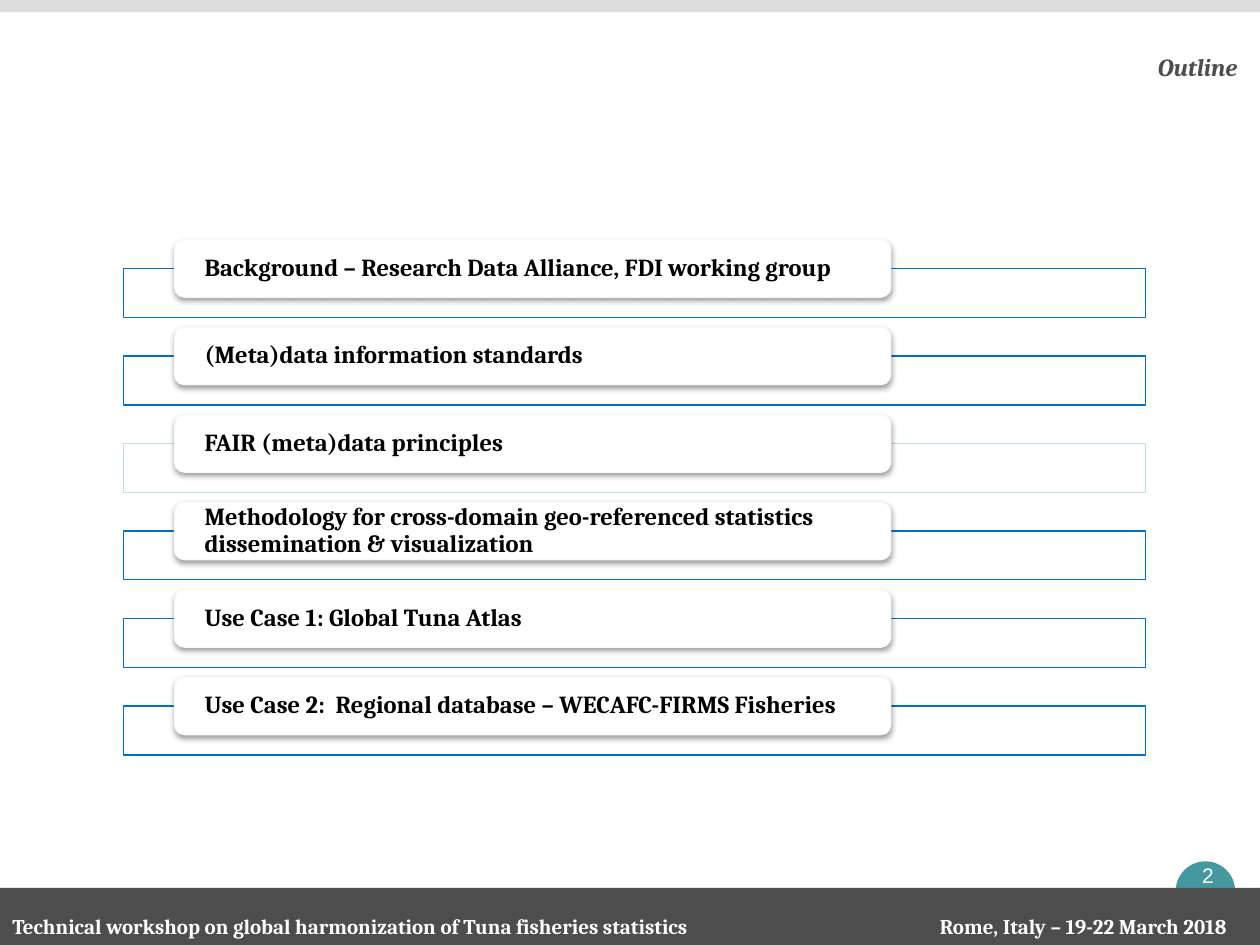
from dataclasses import dataclass, field

from lxml import etree
from pptx import Presentation
from pptx import util as u
from pptx.dml import color
from pptx.enum import shapes, text
from pptx.oxml import ns

COLOURS = {
    "white": "FFFFFF",
    "black": "000000",
    "top band": "DDDDDD",
    "dark grey": "4D4D4D",
    "teal": "4597A0",
    "blue": "0070C0",
    "pale teal": "BBE0E3",
    "card edge": "F9F9F9",
}
SHAPE = shapes.MSO_SHAPE
ALIGN = text.PP_ALIGN
ANCHOR = text.MSO_ANCHOR

HEADING = {"name": "Cambria", "size": u.Pt(14), "bold": True}
FOOTER = {"name": "Cambria", "size": u.Pt(12), "bold": True}
NUMBER = {"name": "Arial", "size": u.Pt(12)}


@dataclass
class Area:
    left: float
    top: float
    width: float
    height: float

    def lengths(self) -> list:
        return [u.Pt(v) for v in (self.left, self.top, self.width, self.height)]


@dataclass
class Label:
    words: str
    font: dict
    colour: str
    frame: dict = field(default_factory=dict)
    para: dict = field(default_factory=dict)


@dataclass
class Topic:
    words: str
    edge: str = "blue"


TOPICS = [
    Topic("Background – Research Data Alliance, FDI working group"),
    Topic("(Meta)data information standards"),
    Topic("FAIR (meta)data principles", "pale teal"),
    Topic("Methodology for cross-domain geo-referenced statistics "
          "dissemination & visualization"),
    Topic("Use Case 1: Global Tuna Atlas"),
    Topic("Use Case 2:  Regional database – WECAFC-FIRMS Fisheries"),
]
TOPIC_STEP = 50
BAR = Area(70.6, 153.4, 584, 28)
CARD = Area(99.8, 137, 409.2, 32.8)
CARD_FRAME = {
    "vertical_anchor": ANCHOR.MIDDLE,
    "margin_left": u.Pt(15.5),
    "margin_right": u.Pt(15.5),
    "margin_top": 0,
    "margin_bottom": 0,
}
CARD_PARA = {"alignment": ALIGN.LEFT, "line_spacing": 0.9, "space_after": u.Pt(4.9)}


def rgb(name: str) -> color.RGBColor:
    return color.RGBColor.from_string(COLOURS[name])


def set_all(target, values: dict) -> None:
    for name, value in values.items():
        setattr(target, name, value)


def add_child(parent, tag: str, **attributes):
    return etree.SubElement(parent, ns.qn(tag), attributes)


def draw_shape(page, kind, area: Area, fill: str, edge: str | None = None):
    shape = page.shapes.add_shape(kind, *area.lengths())
    shape.shadow.inherit = False
    shape.fill.solid()
    shape.fill.fore_color.rgb = rgb(fill)
    if edge:
        shape.line.color.rgb = rgb(edge)
        shape.line.width = u.Pt(0.75)
    else:
        shape.line.fill.background()
    return shape


def write(shape, label: Label):
    frame = shape.text_frame
    frame.word_wrap = True
    set_all(frame, label.frame)
    para = frame.paragraphs[0]
    set_all(para, label.para)
    span = para.add_run()
    span.text = label.words
    set_all(span.font, label.font)
    span.font.color.rgb = rgb(label.colour)
    return para


def draw_text(page, area: Area, label: Label):
    return write(page.shapes.add_textbox(*area.lengths()), label)


def make_translucent(shape, percent: int) -> None:
    fill = shape.fill._xPr.find(ns.qn("a:solidFill"))
    add_child(fill[0], "a:alpha", val=str(percent * 1000))


def drop_shadow(shape) -> None:
    effects = shape._element.spPr.find(ns.qn("a:effectLst"))
    shadow = add_child(effects, "a:outerShdw", blurRad=str(u.Pt(3.1)),
                       dist=str(u.Pt(1.6)), dir="5400000", rotWithShape="0")
    tint = add_child(shadow, "a:srgbClr", val=COLOURS["black"])
    add_child(tint, "a:alpha", val="38000")


def add_right_tab(para, position: float) -> None:
    tabs = add_child(para._p.get_or_add_pPr(), "a:tabLst")
    add_child(tabs, "a:tab", pos=str(u.Pt(position)), algn="r")


def draw_topic(page, topic: Topic, shift: float) -> None:
    bar_area = Area(BAR.left, BAR.top + shift, BAR.width, BAR.height)
    bar = draw_shape(page, SHAPE.RECTANGLE, bar_area, "white", topic.edge)
    make_translucent(bar, 90)
    card_area = Area(CARD.left, CARD.top + shift, CARD.width, CARD.height)
    card = draw_shape(page, SHAPE.ROUNDED_RECTANGLE, card_area, "white", "card edge")
    drop_shadow(card)
    write(card, Label(topic.words, HEADING, "black", CARD_FRAME, CARD_PARA))


def main() -> None:
    deck = Presentation()
    deck.slide_width, deck.slide_height = u.Pt(720), u.Pt(540)
    page = deck.slides.add_slide(deck.slide_layouts[6])

    # Top band, page number and footer
    draw_shape(page, SHAPE.RECTANGLE, Area(0, -2.4, 720, 9.4), "top band")
    draw_shape(page, SHAPE.OVAL, Area(671.8, 492.2, 34, 34), "teal")
    draw_text(page, Area(664, 489.5, 52.4, 21.6),
              Label("2", NUMBER, "white", para={"alignment": ALIGN.CENTER}))
    draw_shape(page, SHAPE.RECTANGLE, Area(0, 507.4, 720, 34), "dark grey")
    footer = draw_text(page, Area(0, 518.4, 720, 21.6), Label(
        "Technical workshop on global harmonization of Tuna fisheries statistics"
        "\tRome, Italy – 19-22 March 2018", FOOTER, "white"))
    add_right_tab(footer, 694)

    # Title
    draw_text(page, Area(207, 9.6, 507.2, 57), Label(
        "Outline", {**HEADING, "italic": True}, "dark grey",
        {"vertical_anchor": ANCHOR.MIDDLE}, {"alignment": ALIGN.RIGHT}))

    # Outline topics
    for index, topic in enumerate(TOPICS):
        draw_topic(page, topic, index * TOPIC_STEP)

    deck.save("out.pptx")


if __name__ == "__main__":
    main()
